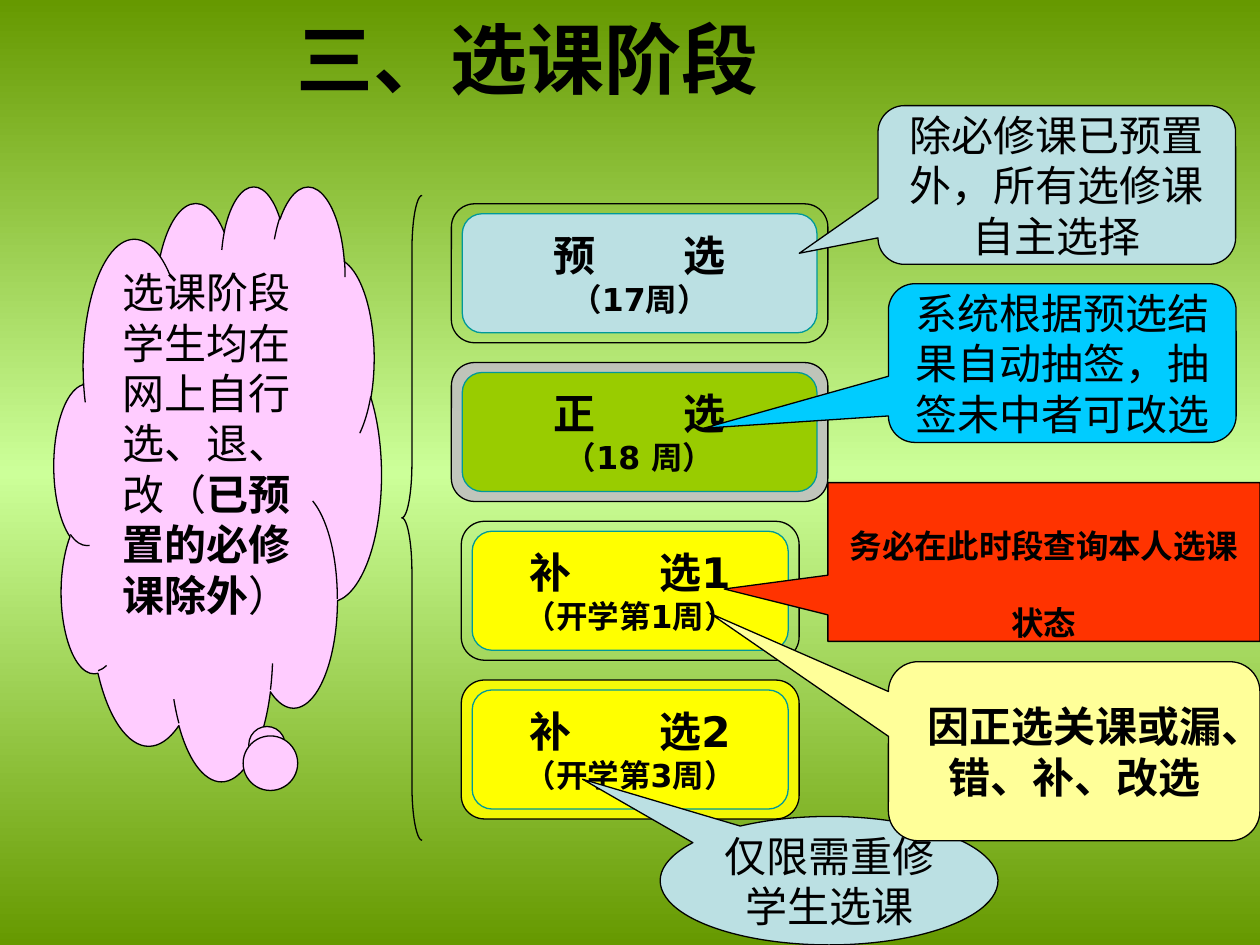
from copy import deepcopy
from dataclasses import dataclass

from pptx import Presentation
from pptx.dml.color import RGBColor
from pptx.enum.shapes import MSO_SHAPE
from pptx.enum.text import MSO_ANCHOR, PP_ALIGN
from pptx.oxml.ns import qn
from pptx.util import Cm, Pt

ROUNDED = MSO_SHAPE.ROUNDED_RECTANGLE
ROUND_CALLOUT = MSO_SHAPE.ROUNDED_RECTANGULAR_CALLOUT
RECT_CALLOUT = MSO_SHAPE.RECTANGULAR_CALLOUT
OVAL_CALLOUT = MSO_SHAPE.OVAL_CALLOUT
CLOUD_CALLOUT = MSO_SHAPE.CLOUD_CALLOUT
BRACE = MSO_SHAPE.LEFT_BRACE
CENTER = PP_ALIGN.CENTER
MIDDLE, TOP = MSO_ANCHOR.MIDDLE, MSO_ANCHOR.TOP

BODY_FONT, TITLE_FONT = "DejaVu Sans", "Arial"
BLACK, TEAL, PALE_BLUE, YELLOW = "000000", "009999", "BBE0E3", "FFFF00"
CORNER = 0.167
STAGE_TOP, STAGE_PITCH, RING_HEIGHT = 4.11, 3.2, 2.8
INSET_X, INSET_Y = 0.22, 0.2
NAME_GAP = Pt(50)


@dataclass
class Box:
    """Place and size in centimetres."""
    left: float
    top: float
    width: float
    height: float

    def lengths(self) -> tuple:
        return Cm(self.left), Cm(self.top), Cm(self.width), Cm(self.height)


@dataclass
class Stage:
    first: str
    second: str
    weeks: str
    left: float
    width: float
    fill: str
    ring_fill: str | None = None


@dataclass
class Callout:
    kind: int
    box: Box
    adjustments: tuple
    fill: str
    runs: tuple  # (text, bold) pairs
    size: float = 24
    anchor: int = MIDDLE


STAGES = (
    Stage("预", "选", "（17周）", 9.1, 7.59, PALE_BLUE),
    Stage("正", "选", "（18 周）", 9.1, 7.59, "99CC00", "C0C0C0"),
    Stage("补", "选1", "（开学第1周）", 9.3, 6.81, YELLOW),
    Stage("补", "选2", "（开学第3周）", 9.3, 6.81, YELLOW, YELLOW),
)

WARNING = Callout(RECT_CALLOUT, Box(16.69, 9.73, 8.71, 3.2), (-0.74, 0.17), "FF3300",
                  (("务必在此时段查询本人选课状态", True),), 32, TOP)
CLOUD = Callout(CLOUD_CALLOUT, Box(1.09, 3.73, 6.6, 11.99), (0.15, 0.44), "FFCCFF",
                (("选课阶段学生均在网上自行选、退、改（", False),
                 ("已预置的必修课除外", True), ("）", False)))
NOTES = (
    Callout(ROUND_CALLOUT, Box(17.7, 2.13, 7.21, 3.2), (-0.72, 0.43, CORNER), PALE_BLUE,
            (("除必修课已预置外，所有选修课自主选择", False),)),
    Callout(ROUND_CALLOUT, Box(17.91, 5.72, 7.01, 3.2), (-1.03, 0.41, CORNER), "00CCFF",
            (("系统根据预选结果自动抽签，抽签未中者可改选", False),)),
    Callout(OVAL_CALLOUT, Box(13.31, 16.46, 6.81, 2.59), (-0.73, -0.79), PALE_BLUE,
            (("仅限需重修学生选课", False),)),
    Callout(ROUND_CALLOUT, Box(17.91, 13.34, 7.49, 3.61), (-0.98, -0.77, CORNER), "FFFF99",
            (("因正选关课或漏、错、补、改选", True),)),
)


def color(value: str) -> RGBColor:
    return RGBColor.from_string(value)


def paint_background(slide) -> None:
    fill = slide.background.fill
    fill.gradient()
    fill.gradient_angle = 90
    stop_list = slide.element.find(".//" + qn("a:gsLst"))
    stop_list.insert(1, deepcopy(stop_list[0]))
    stops = zip(fill.gradient_stops, ((0, "669900"), (0.5, "CCFF99"), (1, "669900")))
    for stop, (position, value) in stops:
        stop.position = position
        stop.color.rgb = color(value)


def add_shape(parent, kind, box: Box, adjustments: tuple, fill: str | None, line: str = BLACK):
    shape = parent.add_shape(kind, *box.lengths())
    shape.shadow.inherit = False
    for index, value in enumerate(adjustments):
        shape.adjustments[index] = value
    if fill:
        shape.fill.solid()
        shape.fill.fore_color.rgb = color(fill)
    else:
        shape.fill.background()
    shape.line.color.rgb = color(line)
    shape.line.width = Pt(0.75)
    return shape


def add_run(paragraph, text: str, size: float, bold: bool, font: str = BODY_FONT):
    paragraph.alignment = CENTER
    run = paragraph.add_run()
    run.text = text
    run.font.name = font
    run.font.size = Pt(size)
    run.font.bold = bold
    run.font.color.rgb = color(BLACK)
    return run


def set_opacity(shape, percent: int) -> None:
    value = shape.element.spPr.find(qn("a:solidFill"))[0]
    value.makeelement(qn("a:alpha"), {})
    alpha = value.makeelement(qn("a:alpha"), {"val": str(percent * 1000)})
    value.append(alpha)


def add_stage(slide, stage: Stage, top: float) -> None:
    group = slide.shapes.add_group_shape()
    ring_box = Box(stage.left, top, stage.width, RING_HEIGHT)
    ring = add_shape(group.shapes, ROUNDED, ring_box, (CORNER,), stage.ring_fill)
    if stage.ring_fill:
        set_opacity(ring, 90)
    panel_box = Box(stage.left + INSET_X, top + INSET_Y,
                    stage.width - 2 * INSET_X, RING_HEIGHT - 2 * INSET_Y)
    panel = add_shape(group.shapes, ROUNDED, panel_box, (CORNER,), stage.fill, TEAL)
    frame = panel.text_frame
    frame.word_wrap = False
    frame.vertical_anchor = MIDDLE
    name = frame.paragraphs[0]
    first = add_run(name, stage.first, 24, True)
    first.font._element.set("spc", str(int(NAME_GAP.pt * 100)))
    add_run(name, stage.second, 24, True)
    add_run(frame.add_paragraph(), stage.weeks, 18, True)


def add_callout(slide, callout: Callout):
    shape = add_shape(slide.shapes, callout.kind, callout.box, callout.adjustments, callout.fill)
    frame = shape.text_frame
    frame.word_wrap = True
    frame.vertical_anchor = callout.anchor
    for text, bold in callout.runs:
        add_run(frame.paragraphs[0], text, callout.size, bold)
    return shape


def add_title(slide) -> None:
    title = slide.shapes.add_textbox(*Box(0.51, 0, 19.41, 2.31).lengths())
    frame = title.text_frame
    frame.word_wrap = True
    frame.vertical_anchor = MIDDLE
    frame.margin_left = Cm(1.1)
    add_run(frame.paragraphs[0], "三、选课阶段", 44, True, TITLE_FONT)


def main() -> None:
    presentation = Presentation()
    presentation.slide_width, presentation.slide_height = Cm(25.4), Cm(19.05)
    slide = presentation.slides.add_slide(presentation.slide_layouts[6])
    paint_background(slide)
    add_title(slide)
    for index, stage in enumerate(STAGES):
        add_stage(slide, stage, STAGE_TOP + index * STAGE_PITCH)

    warning = add_callout(slide, WARNING).text_frame.paragraphs[0]
    warning.space_before = Pt(16)
    warning.runs[0].font._element.set("baseline", "-25000")

    add_shape(slide.shapes, BRACE, Box(8.1, 3.94, 0.41, 13), (2.73, 0.5), None)
    cloud = add_callout(slide, CLOUD)
    cloud.text_frame.margin_bottom = Cm(1.15)
    for note in NOTES:
        add_callout(slide, note)
    presentation.save("out.pptx")


if __name__ == "__main__":
    main()
